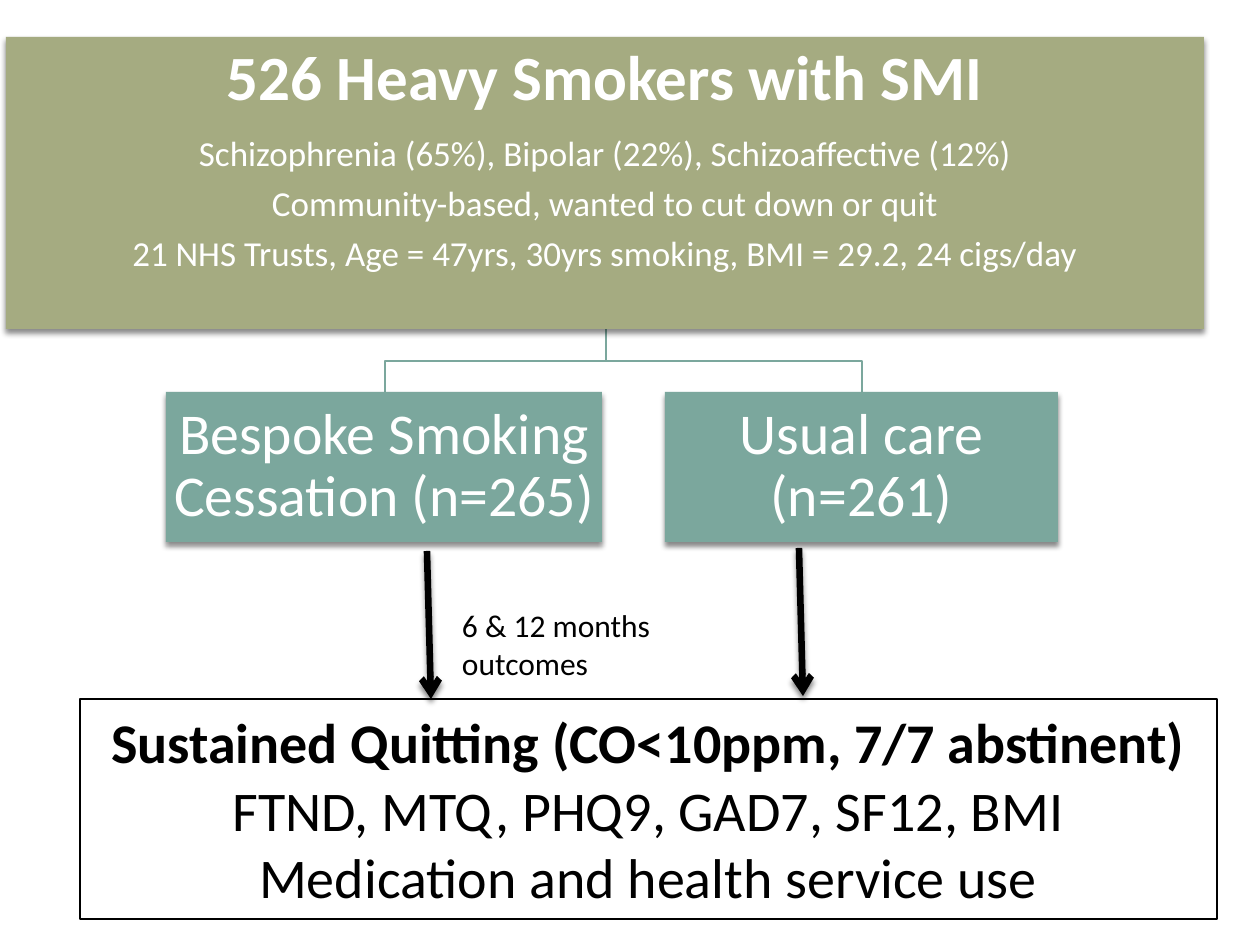
import pptx
import pptx.util
import pptx.dml.color
import pptx.enum.shapes
import pptx.enum.text
import pptx.oxml
import pptx.oxml.ns

PX = 914400 / 126
SAGE, TEAL, WHITE, BLACK = "A5AB81", "7BA79D", "FFFFFF", "000000"


def emu(*vals):
    return [round(v * PX) for v in vals]


def rgb(code):
    return pptx.dml.color.RGBColor.from_string(code)


class Chart:
    """Draws the parts of a trial flow chart on one slide."""

    font = "Calibri"
    shade = (
        '<a:effectLst %s><a:outerShdw blurRad="38100" dist="30480" dir="5400000" '
        'rotWithShape="0"><a:srgbClr val="000000"><a:alpha val="45000"/></a:srgbClr>'
        "</a:outerShdw></a:effectLst>" % pptx.oxml.ns.nsdecls("a")
    )

    def __init__(self, slide):
        self.slide = slide
        self.shapes = slide.shapes

    def cast(self, shape):
        props = shape._element.spPr
        for old in props.findall(pptx.oxml.ns.qn("a:effectLst")):
            props.remove(old)
        props.append(pptx.oxml.parse_xml(self.shade))

    def label(self, shape, rows, color, inset, align="CENTER", anchor="TOP", space=None):
        frame = shape.text_frame
        frame.word_wrap = True
        frame.vertical_anchor = pptx.enum.text.MSO_ANCHOR[anchor]
        side, top = emu(*inset)
        frame.margin_left = frame.margin_right = side
        frame.margin_top = frame.margin_bottom = top
        for i, (text, size, bold) in enumerate(rows):
            para = frame.paragraphs[0] if i == 0 else frame.add_paragraph()
            para.alignment = pptx.enum.text.PP_ALIGN[align]
            if space:
                para.line_spacing = space
                para.space_after = pptx.util.Pt(round(size * 0.35, 1))
            run = para.add_run()
            run.text = text
            run.font.name = self.font
            run.font.size = pptx.util.Pt(size)
            run.font.bold = bold
            run.font.color.rgb = rgb(color)

    def box(self, place, fill=None, line=None):
        shape = self.shapes.add_shape(pptx.enum.shapes.MSO_SHAPE.RECTANGLE, *emu(*place))
        shape.shadow.inherit = False
        if line:
            shape.line.color.rgb = rgb(line)
            shape.line.width = pptx.util.Pt(0.75)
        else:
            shape.line.fill.background()
        if fill:
            shape.fill.solid()
            shape.fill.fore_color.rgb = rgb(fill)
            self.cast(shape)
        else:
            shape.fill.background()
        return shape

    def note(self, place, rows):
        shape = self.shapes.add_textbox(*emu(*place))
        self.label(shape, rows, BLACK, (13, 6), align="LEFT")

    def branch(self, points):
        start, *rest = [emu(*point) for point in points]
        build = self.shapes.build_freeform(*start)
        build.add_line_segments(rest, close=False)
        shape = build.convert_to_shape()
        shape.shadow.inherit = False
        shape.fill.background()
        shape.line.color.rgb = rgb(TEAL)
        shape.line.width = pptx.util.Pt(1.5)

    def arrow(self, start, end):
        kind = pptx.enum.shapes.MSO_CONNECTOR.STRAIGHT
        link = self.shapes.add_connector(kind, *emu(*start, *end))
        link.line.color.rgb = rgb(BLACK)
        link.line.width = pptx.util.Pt(3.75)
        tip = '<a:tailEnd %s type="arrow"/>' % pptx.oxml.ns.nsdecls("a")
        stroke = link._element.spPr.find(pptx.oxml.ns.qn("a:ln"))
        stroke.append(pptx.oxml.parse_xml(tip))
        self.cast(link)


def main():
    deck = pptx.Presentation()
    deck.slide_width = pptx.util.Inches(10)
    deck.slide_height = pptx.util.Inches(7.5)
    chart = Chart(deck.slides.add_slide(deck.slide_layouts[6]))

    stem, fork, row = 606, 361, 392
    for x in (862, 385):
        chart.branch([(stem, 329), (stem, fork), (x, fork), (x, row)])

    group = chart.box((6, 37, 1198, 292), fill=SAGE)
    chart.label(group, [
        ("526 Heavy Smokers with SMI", 36, True),
        ("Schizophrenia (65%), Bipolar (22%), Schizoaffective (12%)", 20, False),
        ("Community-based, wanted to cut down or quit", 20, False),
        ("21 NHS Trusts, Age = 47yrs, 30yrs smoking, BMI = 29.2, 24 cigs/day", 20, False),
    ], WHITE, (4, 9), space=0.9)

    arms = [
        (166, 436, "Bespoke Smoking Cessation (n=265)"),
        (665, 393, "Usual care (n=261)"),
    ]
    for left, width, text in arms:
        arm = chart.box((left, row, width, 150), fill=TEAL)
        chart.label(arm, [(text, 33, False)], WHITE, (3, 3), anchor="MIDDLE", space=0.9)

    result = chart.box((80, 699, 1137, 220), line=BLACK)
    chart.label(result, [
        ("Sustained Quitting (CO<10ppm, 7/7 abstinent)", 32, True),
        ("FTND, MTQ, PHQ9, GAD7, SF12, BMI", 32, False),
        ("Medication and health service use", 32, False),
    ], BLACK, (16, 9))

    chart.arrow((427, 551), (431, 699))
    chart.arrow((799, 548), (803, 696))
    chart.note((449, 600, 333, 50), [("6 & 12 months outcomes", 18, False)])
    deck.save("out.pptx")


if __name__ == "__main__":
    main()
